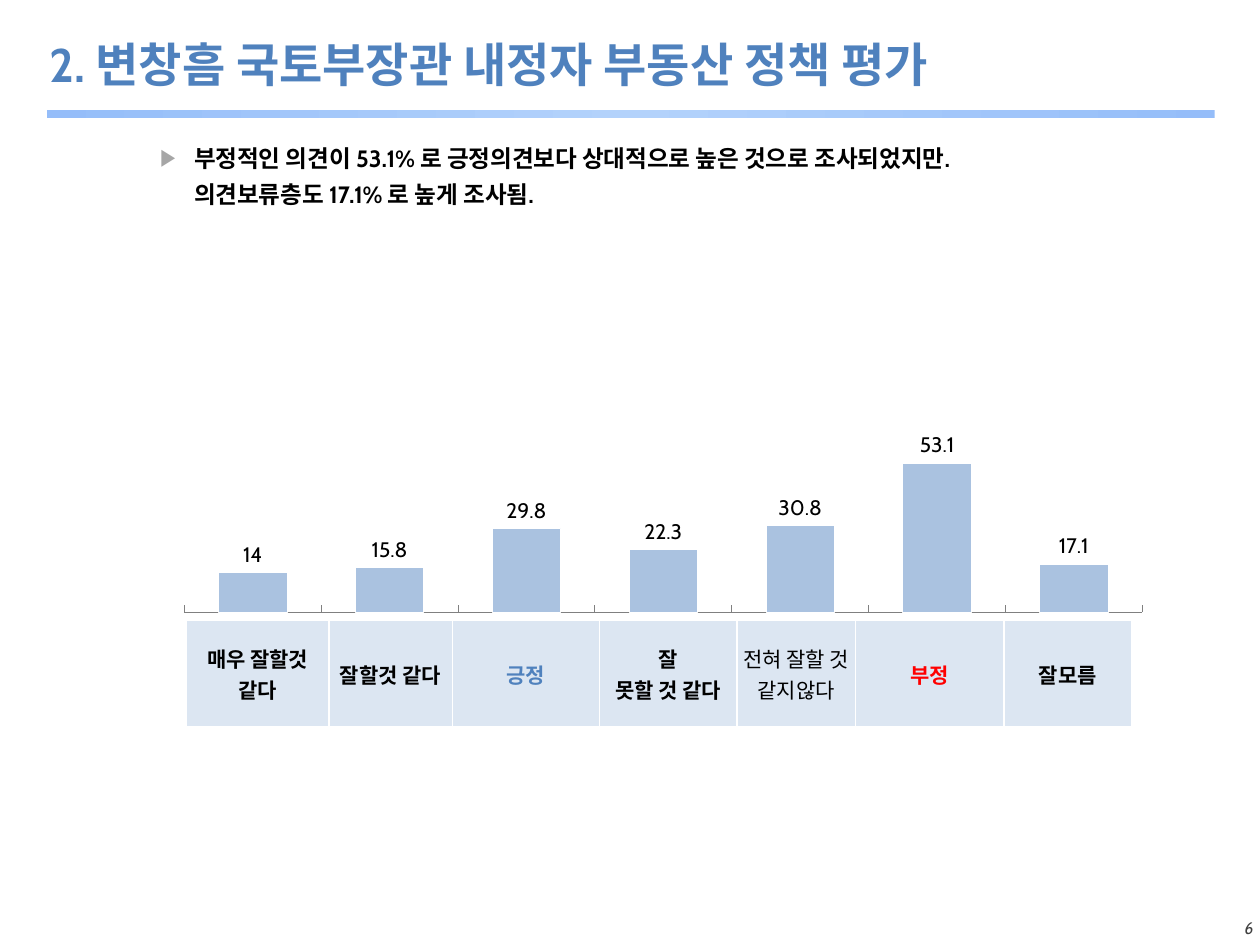
from copy import deepcopy
from typing import NamedTuple

from lxml.etree import SubElement
from pptx import Presentation
from pptx.chart.data import CategoryChartData
from pptx.dml.color import RGBColor
from pptx.enum.chart import XL_CHART_TYPE, XL_LABEL_POSITION, XL_TICK_LABEL_POSITION, XL_TICK_MARK
from pptx.enum.shapes import MSO_SHAPE
from pptx.enum.text import MSO_ANCHOR, MSO_AUTO_SIZE, PP_ALIGN
from pptx.oxml import parse_xml
from pptx.oxml.ns import nsdecls, qn
from pptx.util import Inches, Pt

WIDTH, HEIGHT = Inches(10), Inches(7.5)
LATIN, KOREAN = "Cabin", "Noto Sans CJK KR"
COLORS = {
    "accent": "4F81BD", "text": "000000", "negative": "FF0000", "number": "404040",
    "bullet": "A6A6A6", "rule_edge": "95BDF9", "rule_middle": "B3D2FB",
    "column": "AAC2E0", "cell": "DCE6F2", "axis": "808080", "border": "FFFFFF",
}


class Area(NamedTuple):
    """Left, top, width and height as percentages of the slide."""
    left: float
    top: float
    width: float
    height: float

    def lengths(self) -> tuple:
        sides = (WIDTH, HEIGHT, WIDTH, HEIGHT)
        return tuple(int(side * share / 100) for side, share in zip(sides, self))


class Opinion(NamedTuple):
    label: str
    percent: float
    cell_width: float
    color: str = "text"
    bold: bool = True


OPINIONS = [
    Opinion("매우 잘할것 같다", 14, 1.13),
    Opinion("잘할것 같다", 15.8, 0.98),
    Opinion("긍정", 29.8, 1.17, "accent"),
    Opinion("잘\n못할 것 같다", 22.3, 1.09),
    Opinion("전혀 잘할 것 같지않다", 30.8, 0.94, bold=False),
    Opinion("부정", 53.1, 1.18, "negative"),
    Opinion("잘모름", 17.1, 1.01),
]
FINDINGS = [
    "부정적인 의견이 53.1% 로 긍정의견보다 상대적으로 높은 것으로 조사되었지만.",
    "의견보류층도 17.1% 로 높게 조사됨.",
]


def rgb(name: str) -> RGBColor:
    return RGBColor.from_string(COLORS[name])


def apply(target, **values) -> None:
    for attribute, value in values.items():
        setattr(target, attribute, value)


def place(shape, area: Area) -> None:
    apply(shape, **dict(zip(("left", "top", "width", "height"), area.lengths())))


def style_font(font, size: float, color: str, **values) -> None:
    apply(font, **{"size": Pt(size), "name": LATIN, **values})
    font.color.rgb = rgb(color)


def write(paragraph, text: str, size: float, color: str, **values) -> None:
    run = paragraph.add_run()
    run.text = text
    style_font(run.font, size, color, **values)
    east_asian = SubElement(run.font._element, qn("a:ea"))
    east_asian.set("typeface", KOREAN)


def plain_frame(shape, **values):
    """Text frame without insets or autofit."""
    frame = shape.text_frame
    margins = dict.fromkeys(("margin_left", "margin_top", "margin_right", "margin_bottom"), 0)
    apply(frame, **margins, auto_size=MSO_AUTO_SIZE.NONE, **values)
    return frame


def add_title(slide) -> None:
    title = slide.shapes.title
    place(title, Area(3.9, 3.73, 78.6, 6))
    frame = plain_frame(title, word_wrap=False, vertical_anchor=MSO_ANCHOR.MIDDLE)
    heading = frame.paragraphs[0]
    heading.alignment = PP_ALIGN.LEFT
    write(heading, "2. 변창흠 국토부장관 내정자 부동산 정책 평가", 26.9, "accent", bold=True)


def add_rule(slide) -> None:
    rule = slide.shapes.add_shape(MSO_SHAPE.RECTANGLE, *Area(3.7, 11.6, 92.7, 0.93).lengths())
    rule.shadow.inherit = False
    rule.line.fill.background()
    rule.fill.gradient()
    rule.fill.gradient_angle = 0
    stop_list = rule._element.spPr.find(qn("a:gradFill")).find(qn("a:gsLst"))
    stop_list.insert(1, deepcopy(stop_list[0]))
    shades = ("rule_edge", "rule_middle", "rule_edge")
    for stop, position, shade in zip(rule.fill.gradient_stops, (0, 0.5, 1), shades):
        stop.position = position
        stop.color.rgb = rgb(shade)


def add_findings(slide) -> None:
    body = slide.placeholders[1]
    place(body, Area(12.7, 14.9, 85, 9))
    frame = plain_frame(body, word_wrap=True, vertical_anchor=MSO_ANCHOR.TOP)
    indent = Inches(0.27)
    for index, finding in enumerate(FINDINGS):
        paragraph = frame.add_paragraph() if index else frame.paragraphs[0]
        apply(paragraph, line_spacing=1.1, space_before=Pt(2.9), alignment=PP_ALIGN.LEFT)
        write(paragraph, finding, 13.5, "text", bold=True)
        properties = paragraph._p.get_or_add_pPr()
        properties.set("marL", str(indent))
        properties.set("indent", str(0 if index else -indent))
        if index:
            SubElement(properties, qn("a:buNone"))
        else:
            color = SubElement(properties, qn("a:buClr"))
            SubElement(color, qn("a:srgbClr")).set("val", COLORS["bullet"])
            SubElement(properties, qn("a:buChar")).set("char", "▶")


def add_opinion_chart(slide) -> None:
    data = CategoryChartData()
    data.categories = [str(number) for number in range(1, len(OPINIONS) + 1)]
    data.add_series("Series 1", [opinion.percent for opinion in OPINIONS])
    area = Area(14.1, 44.8, 76.6, 22)
    chart = slide.shapes.add_chart(XL_CHART_TYPE.COLUMN_CLUSTERED, *area.lengths(), data).chart
    apply(chart, has_legend=False, has_title=False)
    style_font(chart.font, 11, "text")

    hidden = {"tick_label_position": XL_TICK_LABEL_POSITION.NONE,
              "minor_tick_mark": XL_TICK_MARK.NONE, "has_major_gridlines": False}
    apply(chart.category_axis, **hidden, major_tick_mark=XL_TICK_MARK.INSIDE)
    axis_line = chart.category_axis.format.line
    axis_line.color.rgb = rgb("axis")
    axis_line.width = Pt(0.5)
    apply(chart.value_axis, **hidden, major_tick_mark=XL_TICK_MARK.NONE,
          minimum_scale=0, maximum_scale=60)
    chart.value_axis.format.line.fill.background()

    plot = chart.plots[0]
    apply(plot, gap_width=100, vary_by_categories=False, has_data_labels=True)
    apply(plot.data_labels, show_value=True, position=XL_LABEL_POSITION.OUTSIDE_END)
    style_font(plot.data_labels.font, 12, "text")
    columns = plot.series[0].format
    columns.fill.solid()
    columns.fill.fore_color.rgb = rgb("column")
    columns.line.color.rgb = rgb("border")
    columns.line.width = Pt(0.5)

    plot_area = chart._chartSpace.chart.plotArea
    for default in plot_area.findall(qn("c:layout")):
        plot_area.remove(default)
    shares = {"x": 0.007, "y": 0.098, "w": 0.993, "h": 0.811}
    sides = "".join(f'<c:{side} val="{share}"/>' for side, share in shares.items())
    plot_area.insert(0, parse_xml(
        f'<c:layout {nsdecls("c")}><c:manualLayout><c:layoutTarget val="inner"/>'
        f'<c:xMode val="edge"/><c:yMode val="edge"/>{sides}</c:manualLayout></c:layout>'))


def add_borders(cell) -> None:
    properties = cell._tc.get_or_add_tcPr()
    for index, side in enumerate("LRTB"):
        properties.insert(index, parse_xml(
            f'<a:ln{side} {nsdecls("a")} w="{Pt(1)}"><a:solidFill>'
            f'<a:srgbClr val="{COLORS["border"]}"/></a:solidFill></a:ln{side}>'))


def add_opinion_table(slide) -> None:
    area = Area(14.8, 65.6, 75, 11.33)
    table = slide.shapes.add_table(1, len(OPINIONS), *area.lengths()).table
    apply(table, first_row=False, horz_banding=False)
    inset = Inches(0.01)
    for column, cell, opinion in zip(table.columns, table.rows[0].cells, OPINIONS):
        column.width = Inches(opinion.cell_width)
        apply(cell, vertical_anchor=MSO_ANCHOR.MIDDLE, margin_left=inset,
              margin_right=inset, margin_top=inset, margin_bottom=0)
        cell.fill.solid()
        cell.fill.fore_color.rgb = rgb("cell")
        add_borders(cell)
        for index, line in enumerate(opinion.label.split("\n")):
            frame = cell.text_frame
            paragraph = frame.add_paragraph() if index else frame.paragraphs[0]
            paragraph.alignment = PP_ALIGN.CENTER
            write(paragraph, line, 12, opinion.color, name=KOREAN, bold=opinion.bold)


def add_page_number(slide) -> None:
    box = slide.shapes.add_textbox(*Area(97.8, 97.07, 1.7, 2.13).lengths())
    number = plain_frame(box, word_wrap=False).paragraphs[0]
    number.alignment = PP_ALIGN.RIGHT
    write(number, "6", 9.6, "number", italic=True)


def main() -> None:
    presentation = Presentation()
    apply(presentation, slide_width=WIDTH, slide_height=HEIGHT)
    slide = presentation.slides.add_slide(presentation.slide_layouts[1])
    for add_part in (add_page_number, add_rule, add_title, add_findings,
                     add_opinion_chart, add_opinion_table):
        add_part(slide)
    presentation.save("out.pptx")


if __name__ == "__main__":
    main()
